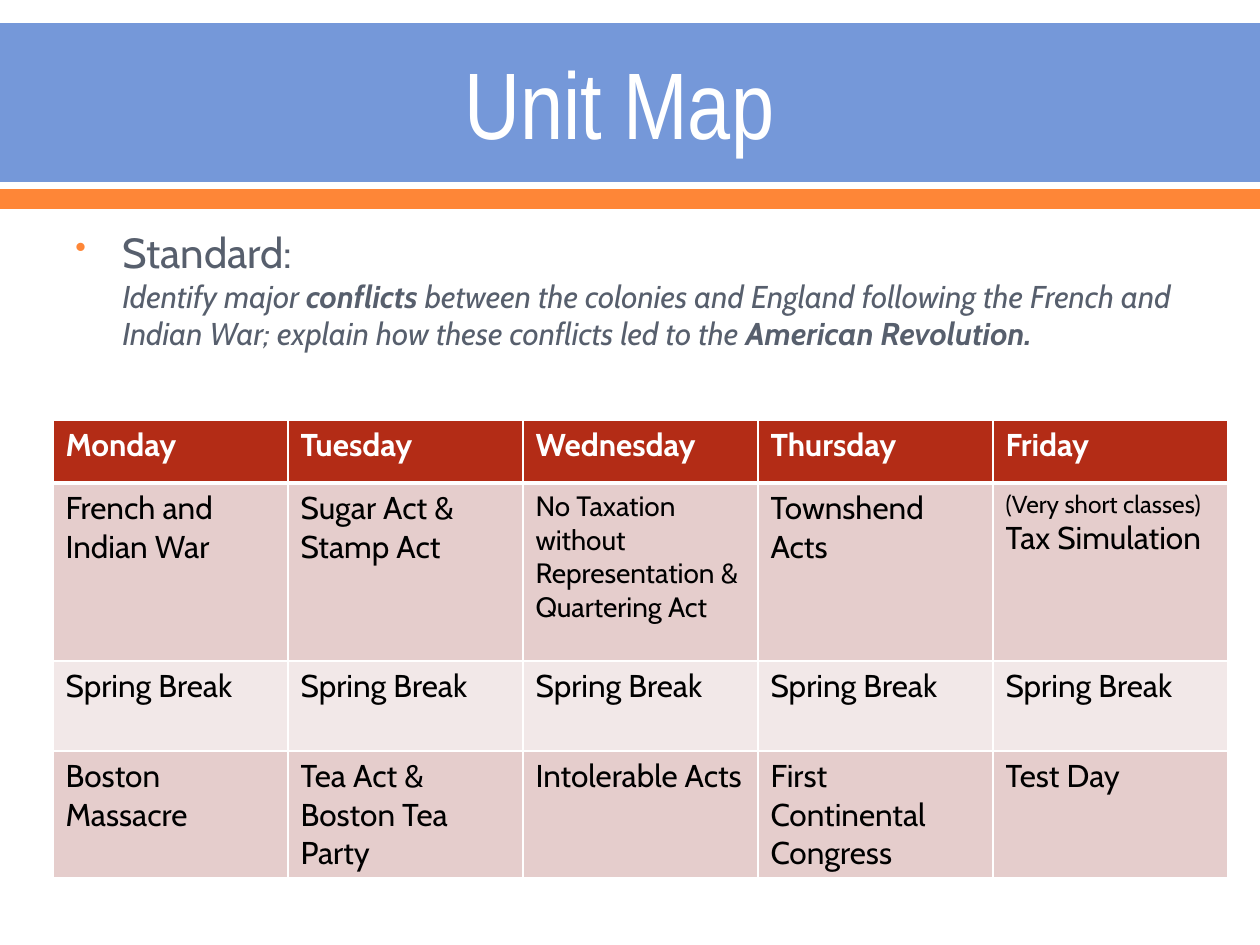
"""Build the Unit Map slide: title banner, standard and weekly schedule table."""
from dataclasses import dataclass
from typing import Optional

from lxml import etree
from pptx import Presentation
from pptx import util as u
from pptx.dml.color import RGBColor
from pptx.enum import shapes, text
from pptx.oxml import ns

PX_PER_INCH = 126


@dataclass(frozen=True)
class Theme:
    blue: str = "7598D9"
    orange: str = "FE8637"
    slate: str = "575F6D"
    header: str = "B32C16"
    rose: str = "E5CDCC"
    pale: str = "F2E8E8"
    white: str = "FFFFFF"
    black: str = "000000"
    title_font: str = "Arial Narrow"
    body_font: str = "Cabin"
    title_size: int = 54
    lead_size: int = 24
    body_size: int = 18
    small_size: int = 16
    note_size: int = 14


@dataclass(frozen=True)
class Box:
    x: int
    y: int
    w: int
    h: int


@dataclass(frozen=True)
class Band:
    box: Box
    color: str


@dataclass(frozen=True)
class Run:
    text: str
    size: int
    color: str
    bold: bool = False
    italic: bool = False
    font: str = Theme.body_font


@dataclass(frozen=True)
class Row:
    height: int
    fill: str
    cells: list[list[Run]]
    top_border: int = 1
    bottom_border: int = 1


T = Theme()


def px(n: int) -> int:
    return u.Emu(round(n * u.Inches(1) / PX_PER_INCH))


def place(box: Box) -> tuple[int, ...]:
    return tuple(px(n) for n in (box.x, box.y, box.w, box.h))


def rgb(color: str) -> RGBColor:
    return RGBColor.from_string(color)


def add_child(parent, tag: str, **attrs: str):
    return etree.SubElement(parent, ns.qn(tag), attrs)


def add_run(p, run: Run) -> None:
    r = p.add_run()
    r.text = run.text
    r.font.name, r.font.size = run.font, u.Pt(run.size)
    r.font.bold, r.font.italic = run.bold, run.italic
    r.font.color.rgb = rgb(run.color)


def add_band(s, band: Band) -> None:
    sp = s.shapes.add_shape(shapes.MSO_SHAPE.RECTANGLE, *place(band.box))
    sp.shadow.inherit = False
    sp.fill.solid()
    sp.fill.fore_color.rgb = rgb(band.color)
    sp.line.fill.background()


def add_text_frame(s, box: Box, anchor):
    tf = s.shapes.add_textbox(*place(box)).text_frame
    tf.word_wrap = True
    tf.vertical_anchor = anchor
    return tf


def add_title(s, box: Box, run: Run) -> None:
    p = add_text_frame(s, box, text.MSO_ANCHOR.MIDDLE).paragraphs[0]
    p.alignment = text.PP_ALIGN.CENTER
    add_run(p, run)


def add_standard(s, box: Box, lead: Run, runs: list[Run]) -> None:
    p = add_text_frame(s, box, text.MSO_ANCHOR.TOP).paragraphs[0]
    p.space_before = u.Pt(5)
    pPr = p._p.get_or_add_pPr()
    pPr.set("marL", str(px(47)))
    pPr.set("indent", str(px(-47)))
    add_child(add_child(pPr, "a:buClr"), "a:srgbClr", val=T.orange)
    add_child(pPr, "a:buSzPct", val="75000")
    add_child(pPr, "a:buChar", char="•")
    add_run(p, lead)
    p.add_line_break()
    for run in runs:
        add_run(p, run)


def set_borders(cell, top: int, bottom: int) -> None:
    tcPr = cell._tc.get_or_add_tcPr()
    for side, width in (("L", 1), ("R", 1), ("T", top), ("B", bottom)):
        ln = add_child(tcPr, f"a:ln{side}", w=str(u.Pt(width)))
        add_child(add_child(ln, "a:solidFill"), "a:srgbClr", val=T.white)


def add_schedule(s, box: Box, rows: list[Row]) -> None:
    count = len(rows[0].cells)
    table = s.shapes.add_table(len(rows), count, *place(box)).table
    for column in table.columns:
        column.width = px(box.w // count)
    for i, row in enumerate(rows):
        table.rows[i].height = px(row.height)
        for j, runs in enumerate(row.cells):
            cell = table.cell(i, j)
            set_borders(cell, row.top_border, row.bottom_border)
            cell.fill.solid()
            cell.fill.fore_color.rgb = rgb(row.fill)
            tf = cell.text_frame
            for k, run in enumerate(runs):
                add_run(tf.add_paragraph() if k else tf.paragraphs[0], run)


def entry(label: str, size: Optional[int] = None) -> Run:
    return Run(label, size or T.body_size, T.black)


def day(label: str) -> Run:
    return Run(label, T.body_size, T.white, bold=True)


def detail(label: str, bold: bool = False) -> Run:
    return Run(label, T.body_size, T.slate, bold, italic=True)


BANDS = [Band(Box(0, 23, 1260, 159), T.blue), Band(Box(0, 189, 1260, 20), T.orange)]
STANDARD = [
    detail("Identify major "),
    detail("conflicts", True),
    detail(" between the colonies and England following the French and Indian War; "
           "explain how these conflicts led to the "),
    detail("American Revolution.", True),
]
DAYS = ["Monday", "Tuesday", "Wednesday", "Thursday", "Friday"]
LAST_WEEK = ["Boston Massacre", "Tea Act & Boston Tea Party", "Intolerable Acts",
             "First Continental Congress", "Test Day"]
SCHEDULE = [
    Row(63, T.header, [[day(name)] for name in DAYS], bottom_border=3),
    Row(178, T.rose, [
        [entry("French and Indian War")],
        [entry("Sugar Act & Stamp Act")],
        [entry("No Taxation without Representation & Quartering Act", T.small_size)],
        [entry("Townshend Acts")],
        [entry("(Very short classes)", T.note_size), entry("Tax Simulation")],
    ], top_border=3),
    Row(90, T.pale, [[entry("Spring Break")] for _ in DAYS]),
    Row(127, T.rose, [[entry(topic)] for topic in LAST_WEEK]),
]


def main() -> None:
    prs = Presentation()
    prs.slide_width, prs.slide_height = px(1260), px(945)
    s = prs.slides.add_slide(prs.slide_layouts[6])
    for band in BANDS:
        add_band(s, band)
    add_title(s, Box(63, 25, 1134, 154),
              Run("Unit Map ", T.title_size, T.white, font=T.title_font))
    add_standard(s, Box(63, 220, 1134, 624),
                 Run("Standard:", T.lead_size, T.slate), STANDARD)
    add_schedule(s, Box(53, 420, 1175, 458), SCHEDULE)
    prs.save("out.pptx")


if __name__ == "__main__":
    main()
